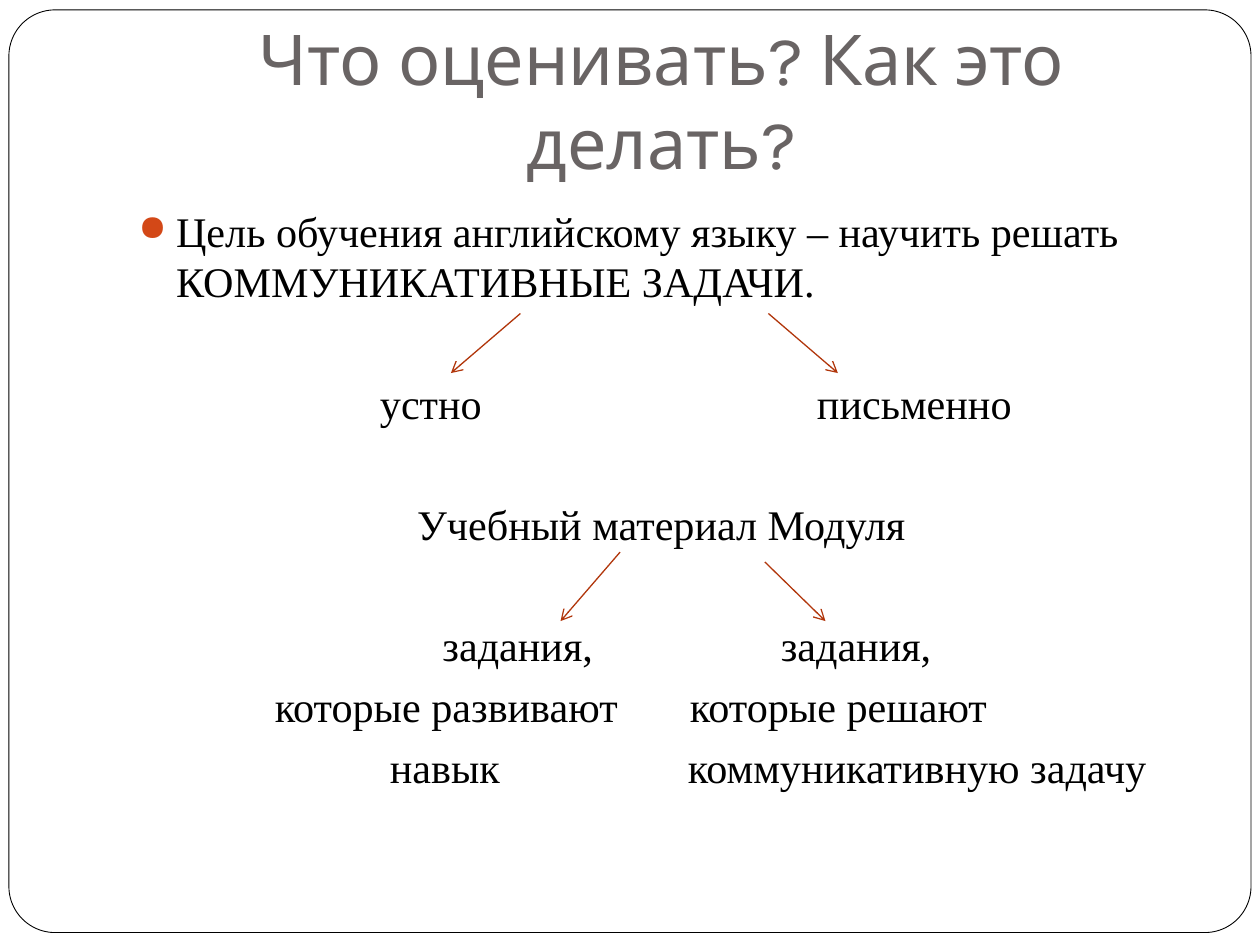
from pptx import Presentation
from pptx.util import Cm, Pt
from pptx.dml.color import RGBColor
from pptx.enum.shapes import MSO_SHAPE, MSO_CONNECTOR
from pptx.enum.text import PP_ALIGN, MSO_ANCHOR
from pptx.oxml.ns import qn
from lxml.etree import SubElement

GAP = 5.8
SKIP = 40.4  # paragraph gap plus one empty line


def color(code):
    return RGBColor.from_string(code)


def style(para, font, size, code):
    for run in para.runs:
        run.font.name = font
        run.font.size = Pt(size)
        run.font.color.rgb = color(code)


def text_box(slide, x, y, w, h):
    frame = slide.shapes.add_textbox(Cm(x), Cm(y), Cm(w), Cm(h)).text_frame
    frame.word_wrap = True
    return frame


def add_frame(slide, x, y, w, h):
    card = slide.shapes.add_shape(MSO_SHAPE.ROUNDED_RECTANGLE, Cm(x), Cm(y), Cm(w), Cm(h))
    card.adjustments[0] = 0.05
    card.shadow.inherit = False
    card.fill.solid()
    card.fill.fore_color.rgb = color("FFFFFF")
    card.line.color.rgb = color("000000")
    card.line.width = Pt(0.5)


def add_title(slide, x, y, w, h):
    frame = text_box(slide, x, y, w, h)
    frame.vertical_anchor = MSO_ANCHOR.BOTTOM
    frame.margin_bottom = Cm(0.25)
    para = frame.paragraphs[0]
    para.text = "Что оценивать? Как это делать?"
    para.alignment = PP_ALIGN.CENTER
    style(para, "Karla", 40, "696464")


def set_bullet(para, indent):
    props = para._p.get_or_add_pPr()
    props.set("marL", str(Cm(indent)))
    props.set("indent", str(-Cm(indent)))
    tint = SubElement(props, qn("a:buClr"))
    SubElement(tint, qn("a:srgbClr"), val="D34817")
    SubElement(props, qn("a:buSzPct"), val="85000")
    SubElement(props, qn("a:buChar"), char="●")


def set_tabs(para, stops):
    tabs = SubElement(para._p.get_or_add_pPr(), qn("a:tabLst"))
    for stop in stops:
        SubElement(tabs, qn("a:tab"), pos=str(Cm(stop)), algn="l")


def add_body(slide, x, y, w, h):
    """Place the goal, then each pair of branches on its own tab stops."""
    frame = text_box(slide, x, y, w, h)
    goal = frame.paragraphs[0]
    goal.text = "Цель обучения английскому языку – научить решать КОММУНИКАТИВНЫЕ ЗАДАЧИ."
    goal.space_before = Pt(GAP)
    set_bullet(goal, 0.76)
    rows = [
        ("\tустно\tписьменно", SKIP, (4.87, 13.68)),
        ("Учебный материал Модуля", SKIP, ()),
        ("\tзадания,\tзадания,", SKIP, (6.13, 12.95)),
        ("\tкоторые развивают\tкоторые решают", GAP, (2.75, 11.12)),
        ("\tнавык\tкоммуникативную задачу", GAP, (5.07, 11.08)),
    ]
    for text, gap, stops in rows:
        para = frame.add_paragraph()
        para.text = text
        para.space_before = Pt(gap)
        if stops:
            set_tabs(para, stops)
        else:
            para.alignment = PP_ALIGN.CENTER
    for para in frame.paragraphs:
        style(para, "Times New Roman", 24.1, "000000")


def add_arrow(slide, x1, y1, x2, y2):
    arrow = slide.shapes.add_connector(MSO_CONNECTOR.STRAIGHT, Cm(x1), Cm(y1), Cm(x2), Cm(y2))
    arrow.line.color.rgb = color("B1360B")
    arrow.line.width = Pt(0.75)
    SubElement(arrow.line._get_or_add_ln(), qn("a:tailEnd"), type="arrow")
    SubElement(arrow._element.spPr, qn("a:effectLst"))


def main():
    deck = Presentation()
    deck.slide_width, deck.slide_height = Cm(25.4), Cm(19.05)
    slide = deck.slides.add_slide(deck.slide_layouts[6])
    add_frame(slide, 0.18, 0.2, 25.04, 18.6)
    add_title(slide, 2.54, 0.76, 21.59, 3.18)
    add_body(slide, 2.54, 4.01, 21.59, 12.7)
    for ends in [
        (10.49, 6.32, 9.09, 7.52),
        (15.49, 6.32, 16.89, 7.52),
        (12.5, 11.13, 11.3, 12.52),
        (15.42, 11.33, 16.64, 12.52),
    ]:
        add_arrow(slide, *ends)
    deck.save("out.pptx")


if __name__ == "__main__":
    main()
